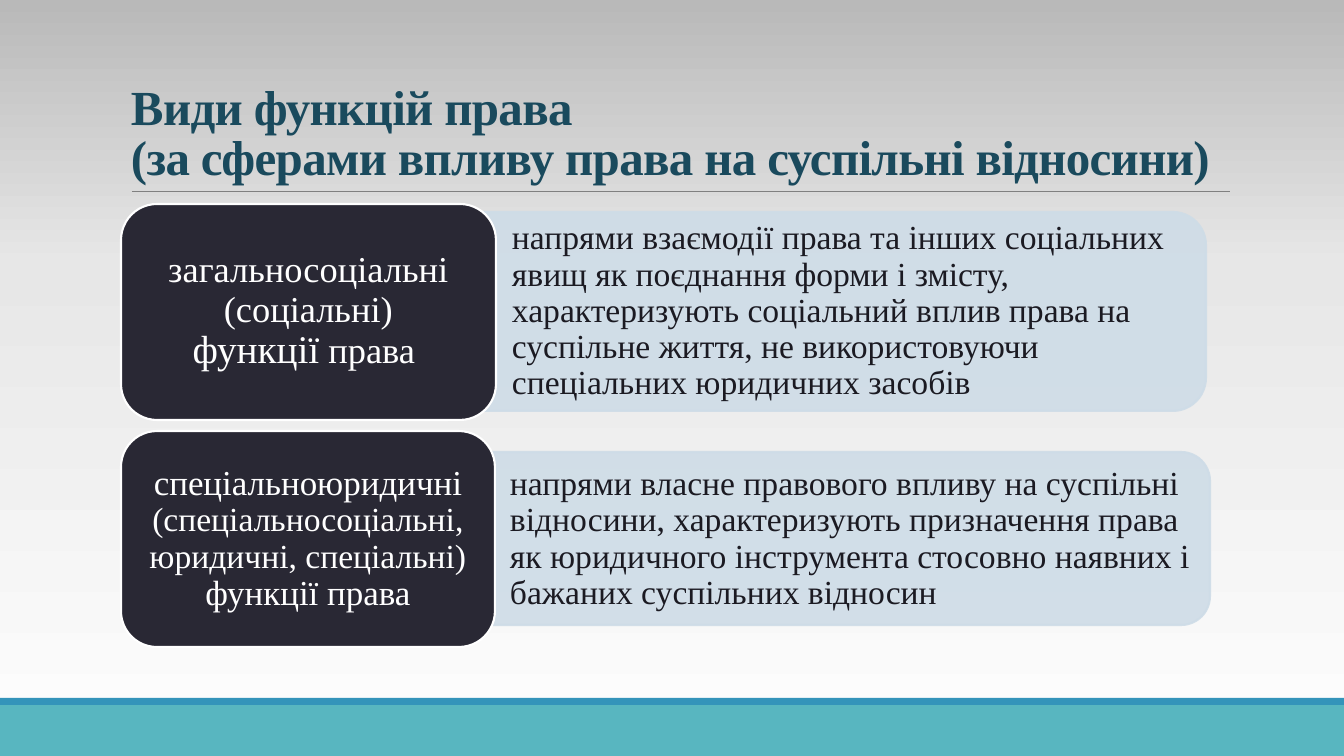
from copy import deepcopy

from lxml.etree import SubElement
from pptx import Presentation
from pptx.dml.color import RGBColor
from pptx.enum.shapes import MSO_CONNECTOR, MSO_SHAPE as SHAPE
from pptx.enum.text import MSO_ANCHOR as ANCHOR, MSO_AUTO_SIZE, PP_ALIGN as ALIGN
from pptx.oxml.ns import qn
from pptx.util import Emu, Pt

WIDTH, HEIGHT = 1344, 756
EMU_PER_PX = 12192000 / WIDTH
FONT = "Times New Roman"
TEAL, BLUE, TITLE_BLUE = "58B6C0", "3494BA", "1A4A5D"
DARK, PALE, INK, WHITE, GRAY = "292834", "CEDCE7", "1B1A22", "FFFFFF", "808080"
BACKGROUND = [(0, "FEFEFE"), (0.65, "E7E7E7"), (1, "B9B9B9")]

TITLE = "Види функцій права\n(за сферами впливу права на суспільні відносини)"
# label box, label runs, panel box, panel text box, text insets, panel text
ROWS = [
    ((121, 204, 375, 216),
     [("загальносоціальні (соціальні)\n", 26), ("функції", 28), (" права ", 26)],
     (472, 212, 734, 199), (472, 222, 724, 179), (40, 7, 15, 7),
     "напрями взаємодії права та інших соціальних явищ як поєднання форми і змісту, "
     "характеризують соціальний вплив права на суспільне життя, "
     "не використовуючи спеціальних юридичних засобів"),
    ((121, 431, 374, 216),
     [("спеціальноюридичні ", 25),
      ("(спеціальносоціальні, юридичні, спеціальні)\n", 24), ("функції права", 25)],
     (475, 452, 735, 173), (475, 461, 727, 156), (35, 5, 10, 5),
     "напрями власне правового впливу на суспільні відносини, "
     "характеризують призначення права як юридичного інструмента "
     "стосовно наявних і бажаних суспільних відносин"),
]


def px(n):
    return Emu(round(n * EMU_PER_PX))


def rgb(color):
    return RGBColor.from_string(color)


def write(tf, runs, color, anchor=ANCHOR.MIDDLE, align=ALIGN.LEFT, spacing=0.9,
          insets=(10, 5, 10, 5), bold=False, tracking=0):
    """Fill a text frame with one paragraph of (text, size) runs."""
    tf.word_wrap = True
    tf.auto_size = MSO_AUTO_SIZE.NONE
    tf.vertical_anchor = anchor
    tf.margin_left, tf.margin_top, tf.margin_right, tf.margin_bottom = map(px, insets)
    p = tf.paragraphs[0]
    p.alignment, p.line_spacing = align, spacing
    for text, size in runs:
        for i, part in enumerate(text.split("\n")):
            if i:
                p.add_line_break()
            if not part:
                continue
            r = p.add_run()
            r.text = part
            font = r.font
            font.name, font.size, font.bold = FONT, Pt(size), bold
            font.color.rgb = rgb(color)
            if tracking:
                r._r.get_or_add_rPr().set("spc", str(round(tracking * 100)))


class SlideBuilder:
    """Draws elements on one slide; every box is (left, top, width, height) in px."""

    def __init__(self, slide):
        self.slide = slide
        self.shapes = slide.shapes

    def background(self, stops):
        fill = self.slide.background.fill
        fill.gradient()
        fill.gradient_angle = 90
        first = fill.gradient_stops[0]._gs
        first.addnext(deepcopy(first))
        for stop, (position, color) in zip(fill.gradient_stops, stops):
            stop.position = position
            stop.color.rgb = rgb(color)

    def title(self, box, text):
        sp = self.shapes.title
        sp.left, sp.top, sp.width, sp.height = map(px, box)
        write(sp.text_frame, [(text, 35)], TITLE_BLUE, anchor=ANCHOR.BOTTOM,
              spacing=0.85, bold=True, tracking=-0.5)

    def shape(self, kind, box, fill, line=None):
        sp = self.shapes.add_shape(kind, *map(px, box))
        sp.shadow.inherit = False
        sp.fill.solid()
        sp.fill.fore_color.rgb = rgb(fill)
        if line:
            sp.line.color.rgb = rgb(line)
            sp.line.width = Pt(1.5)
        else:
            sp.line.fill.background()
        return sp

    def rule(self, left, right, y):
        line = self.shapes.add_connector(
            MSO_CONNECTOR.STRAIGHT, px(left), px(y), px(right), px(y))
        line.line.color.rgb = rgb(GRAY)
        line.line.width = Pt(0.5)
        SubElement(line._element.spPr, qn("a:effectLst"))

    def panel(self, box):
        """Translucent panel whose two right corners are rounded."""
        left, top, width, height = box
        shift = (width - height) / 2
        sp = self.shape(SHAPE.ROUND_2_SAME_RECTANGLE,
                        (left + shift, top - shift, height, width), PALE, PALE)
        sp.rotation = 90
        for color in sp._element.spPr.iter(qn("a:srgbClr")):
            SubElement(color, qn("a:alpha"), val="90000")

    def text(self, box, text, insets):
        tf = self.shapes.add_textbox(*map(px, box)).text_frame
        write(tf, [(text, 24)], INK, insets=insets)

    def label(self, box, runs):
        sp = self.shape(SHAPE.ROUNDED_RECTANGLE, box, DARK, WHITE)
        write(sp.text_frame, runs, WHITE, align=ALIGN.CENTER)


def main():
    prs = Presentation()
    prs.slide_width, prs.slide_height = px(WIDTH), px(HEIGHT)
    s = SlideBuilder(prs.slides.add_slide(prs.slide_layouts[5]))
    s.background(BACKGROUND)
    s.shape(SHAPE.RECTANGLE, (0, 705, WIDTH, 51), TEAL)
    s.shape(SHAPE.RECTANGLE, (0, 698, WIDTH, 7), BLUE)
    s.rule(132, 1230, 191)
    s.title((121, 31, 1109, 160), TITLE)
    for label_box, runs, panel_box, text_box, insets, text in ROWS:
        s.panel(panel_box)
        s.text(text_box, text, insets)
        s.label(label_box, runs)
    prs.save("out.pptx")


if __name__ == "__main__":
    main()
